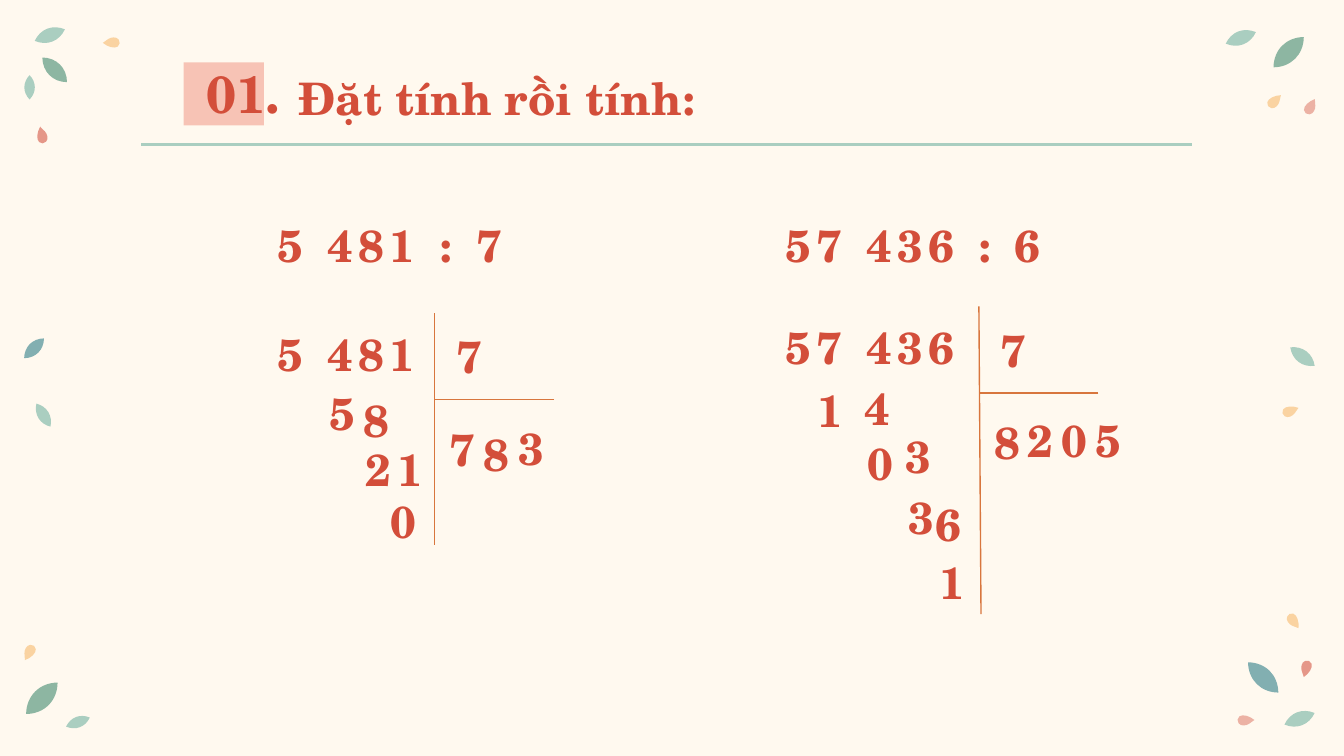
from dataclasses import dataclass

from lxml import etree
from pptx import Presentation
from pptx import util as u
from pptx.dml.color import RGBColor
from pptx.enum import shapes, text
from pptx.oxml import ns


@dataclass(frozen=True)
class Theme:
    font: str = "TeX Gyre Schola"
    paper: str = "FFF9EF"
    ink: str = "D34E3A"
    rule: str = "D8763D"
    mint: str = "AACEC0"
    # Translucent colours: (RGB, opacity in percent)
    green: tuple = ("57977E", 68)
    teal: tuple = ("4B8F96", 69)
    amber: tuple = ("F39A2D", 40)
    red: tuple = ("D34E3A", 57)
    rose: tuple = ("D34E3A", 41)
    badge: tuple = ("F09381", 52)
    number_size: int = 28
    body_size: int = 24
    spacing: int = 3


THEME = Theme()
LINE_HEIGHT = 1.37
DIGIT_WIDTH = 0.91

# Outlines in a box of 100 units: a start point, then three points per cubic curve
LEAF = [(50, 0), (82, 14), (100, 32), (100, 50), (100, 68), (82, 86), (50, 100),
        (18, 86), (0, 68), (0, 50), (0, 32), (18, 14), (50, 0)]
PETAL = [(100, 100), (90, 50), (60, 0), (32, 0), (12, 0), (0, 22), (0, 45),
         (0, 80), (35, 100), (55, 100), (70, 100), (85, 100), (100, 100)]

# left, top, height, rotation, colour
LEAVES = [
    (0.81, 0.36, 0.61, 69, THEME.mint),
    (0.89, 0.99, 0.66, 135, THEME.green),
    (0.46, 1.42, 0.46, 180, THEME.mint),
    (0.53, 6.32, 0.53, 45, THEME.teal),
    (0.71, 7.59, 0.51, 148.6, THEME.mint),
    (0.61, 12.78, 0.84, 45, THEME.green),
    (1.37, 13.41, 0.48, 69, THEME.mint),
    (24.43, 13.28, 0.61, 249, THEME.mint),
    (23.7, 12.4, 0.81, 315, THEME.teal),
    (24.18, 0.58, 0.81, 225, THEME.green),
    (23.32, 0.41, 0.61, 249, THEME.mint),
    (24.49, 6.45, 0.58, 127.2, THEME.mint),
]
# left, top, rotation, colour
PETALS = [
    (1.98, 0.71, 144.9, THEME.amber),
    (0.64, 2.46, 225, THEME.red),
    (0.43, 12.22, 85.9, THEME.amber),
    (23.39, 13.49, 324.8, THEME.rose),
    (24.31, 11.61, 21.4, THEME.amber),
    (24.56, 12.52, 71.1, THEME.red),
    (24.61, 1.91, 265.9, THEME.rose),
    (23.93, 1.8, 283.1, THEME.amber),
    (24.23, 7.65, 305.2, THEME.amber),
]

# Each text: words, left, top, width; each digit: character, left, top
DIVISIONS = [
    {
        "texts": [("5 481", 5, 5.92, 5.33), ("7", 8.38, 5.97, 3.1),
                  ("5 481 : 7", 5, 3.86, 7.39)],
        "lines": [(8.21, 10.3, 8.21, 5.92), (10.47, 7.55, 8.21, 7.55)],
        "digits": [("7", 8.25, 7.72), ("5", 5.97, 7.04), ("8", 6.63, 7.17),
                   ("8", 8.89, 7.82), ("2", 6.65, 8.1), ("1", 7.26, 8.1),
                   ("3", 9.55, 7.7), ("0", 7.14, 9.08)],
    },
    {
        "texts": [("57 436 : 6", 14.59, 3.86, 5.82), ("57 436", 14.59, 5.79, 5.33),
                  ("7", 18.66, 5.85, 3.1)],
        "lines": [(18.54, 11.61, 18.5, 5.79), (20.76, 7.43, 18.5, 7.43)],
        "digits": [("8", 18.54, 7.59), ("1", 15.21, 6.99), ("4", 16.08, 6.94),
                   ("2", 19.17, 7.55), ("0", 16.15, 7.98), ("3", 16.87, 7.85),
                   ("0", 19.81, 7.55), ("3", 16.92, 9), ("6", 17.43, 9.14),
                   ("5", 20.45, 7.55), ("1", 17.5, 10.24)],
    },
]


def apply(target, values):
    for name, value in values.items():
        setattr(target, name, value)


def paint(shape, colour):
    """Fill a shape, without outline or shadow; a tuple adds opacity."""
    rgb, opacity = colour if isinstance(colour, tuple) else (colour, 100)
    shape.shadow.inherit = False
    shape.line.fill.background()
    shape.fill.solid()
    shape.fill.fore_color.rgb = RGBColor.from_string(rgb)
    if opacity < 100:
        node = shape._element.spPr.find(".//" + ns.qn("a:srgbClr"))
        etree.SubElement(node, ns.qn("a:alpha"), val=str(opacity * 1000))


def bend(shape):
    """Turn every three straight segments of a freeform into one cubic curve."""
    segments = list(shape._element.iter(ns.qn("a:lnTo")))
    for first in range(0, len(segments), 3):
        curve = etree.Element(ns.qn("a:cubicBezTo"))
        segments[first].addprevious(curve)
        for segment in segments[first:first + 3]:
            curve.append(segment[0])
            segment.getparent().remove(segment)


def add_foliage(page, outline, left, top, width, height, rotation, colour):
    builder = page.shapes.build_freeform(*outline[0])
    builder.add_line_segments(outline[1:], close=True)
    shape = builder.convert_to_shape()
    bend(shape)
    apply(shape, {"left": u.Cm(left), "top": u.Cm(top), "width": u.Cm(width),
                  "height": u.Cm(height), "rotation": rotation})
    paint(shape, colour)


def add_text(parent, words, left, top, width, height=LINE_HEIGHT,
             size=THEME.body_size, spacing=0):
    box = parent.shapes.add_textbox(*map(u.Cm, (left, top, width, height)))
    margin = u.Cm(0.25)
    apply(box.text_frame, {
        "word_wrap": True, "vertical_anchor": text.MSO_ANCHOR.TOP,
        "margin_left": margin, "margin_right": margin,
        "margin_top": margin, "margin_bottom": margin})
    para = box.text_frame.paragraphs[0]
    span = para.add_run()
    span.text = words
    apply(span.font, {"name": THEME.font, "size": u.Pt(size), "bold": True})
    span.font.color.rgb = RGBColor.from_string(THEME.ink)
    if spacing:
        span._r.get_or_add_rPr().set("spc", str(spacing * 100))


def add_line(page, ends, colour, weight):
    line = page.shapes.add_connector(shapes.MSO_CONNECTOR.STRAIGHT, *map(u.Cm, ends))
    line.line.color.rgb = RGBColor.from_string(colour)
    line.line.width = u.Pt(weight)
    etree.SubElement(line._element.spPr, ns.qn("a:effectLst"))


def add_heading(page):
    add_line(page, (2.67, 2.73, 22.53, 2.73), THEME.mint, 1.5)
    group = page.shapes.add_group_shape()
    badge = group.shapes.add_shape(shapes.MSO_SHAPE.RECTANGLE,
                                   *map(u.Cm, (3.47, 1.18, 1.52, 1.19)))
    paint(badge, THEME.badge)
    add_text(group, "01.", 3.66, 0.91, 2.69, 2.01, THEME.number_size)
    add_text(page, "Đặt tính rồi tính:", 5.39, 1.09, 20)


def add_division(page, division):
    for words, left, top, width in division["texts"]:
        add_text(page, words, left, top, width, spacing=THEME.spacing)
    for ends in division["lines"]:
        add_line(page, ends, THEME.rule, 0.75)
    for digit, left, top in division["digits"]:
        add_text(page, digit, left, top, DIGIT_WIDTH, spacing=THEME.spacing)


def main():
    deck = Presentation()
    apply(deck, {"slide_width": u.Cm(25.4), "slide_height": u.Cm(14.29)})
    page = deck.slides.add_slide(deck.slide_layouts[6])
    page.background.fill.solid()
    page.background.fill.fore_color.rgb = RGBColor.from_string(THEME.paper)
    for left, top, height, rotation, colour in LEAVES:
        add_foliage(page, LEAF, left, top, height * 0.43, height, rotation, colour)
    for left, top, rotation, colour in PETALS:
        add_foliage(page, PETAL, left, top, 0.28, 0.22, rotation, colour)
    add_heading(page)
    for division in DIVISIONS:
        add_division(page, division)
    deck.save("out.pptx")


if __name__ == "__main__":
    main()
